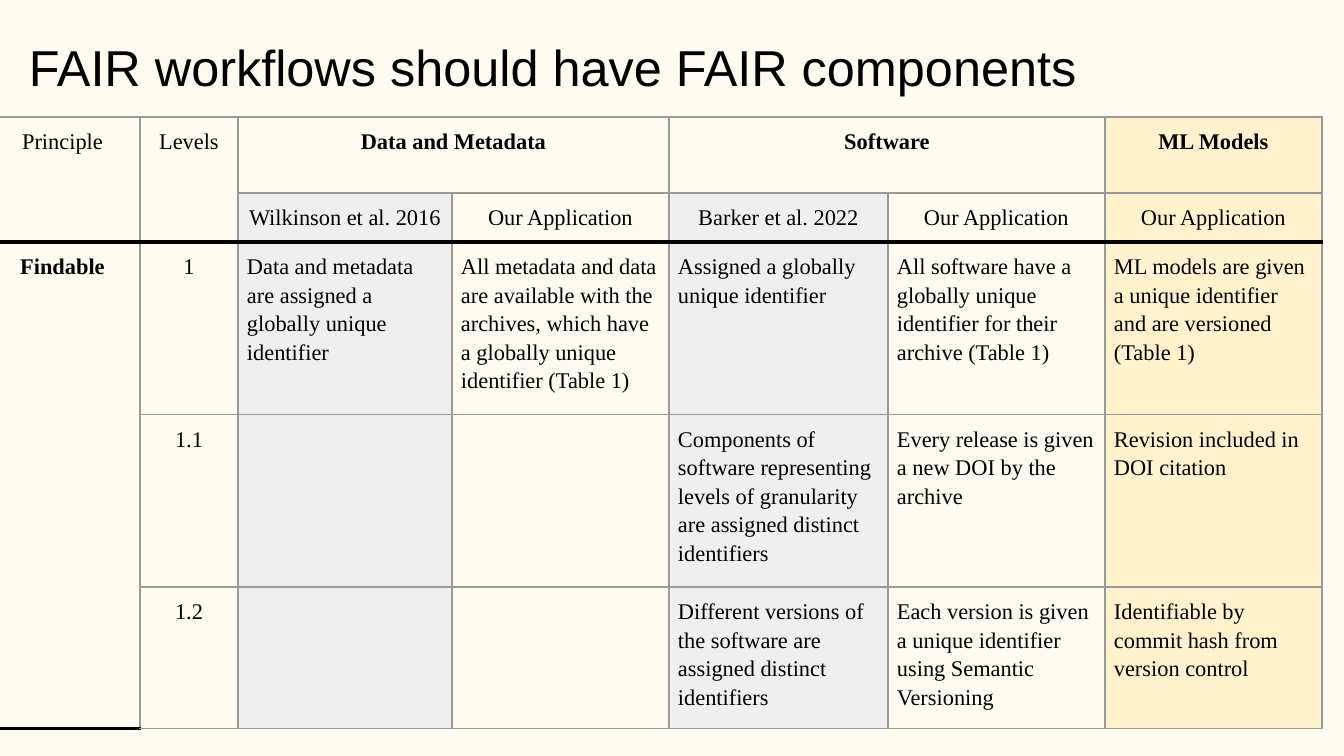
from lxml.etree import SubElement
from pptx import Presentation
from pptx.dml.color import RGBColor
from pptx.enum.text import MSO_ANCHOR, PP_ALIGN
from pptx.oxml.ns import qn
from pptx.util import Pt

PX = 914400 / 134.4
CREAM = RGBColor(0xFF, 0xFB, 0xF0)
BLACK = RGBColor(0, 0, 0)
GRID = RGBColor(0x99, 0x99, 0x99)
GREY = RGBColor(0xEF, 0xEF, 0xEF)
YELLOW = RGBColor(0xFF, 0xF2, 0xCC)

COLUMNS = [155, 98, 214, 217, 219, 217, 217]
ROWS = [76, 47, 162, 161, 133]
HEADER_ROWS = 2
FILLS = {2: GREY, 4: GREY, 6: YELLOW}
BOLD = {"Data and Metadata", "Software", "ML Models", "Findable"}
TEXTS = [
    ["Principle", "Levels", "Data and Metadata", "", "Software", "", "ML Models"],
    ["", "", "Wilkinson et al. 2016", "Our Application",
     "Barker et al. 2022", "Our Application", "Our Application"],
    ["Findable", "1",
     "Data and metadata are assigned a globally unique identifier",
     "All metadata and data are available with the archives, which have "
     "a globally unique identifier (Table 1)",
     "Assigned a globally unique identifier",
     "All software have a globally unique identifier for their archive (Table 1)",
     "ML models are given a unique identifier and are versioned (Table 1)"],
    ["", "1.1", "", "",
     "Components of software representing levels of granularity "
     "are assigned distinct identifiers",
     "Every release is given a new DOI by the archive",
     "Revision included in DOI citation"],
    ["", "1.2", "", "",
     "Different versions of the software are assigned distinct identifiers",
     "Each version is given a unique identifier using Semantic Versioning",
     "Identifiable by commit hash from version control"],
]
# First and last cell of each merged block, as (row, column)
MERGES = [((0, 0), (1, 0)), ((0, 1), (1, 1)), ((0, 2), (0, 3)),
          ((0, 4), (0, 5)), ((2, 0), (4, 0))]


def px(length):
    return round(length * PX)


def write(frame, text, font="Times New Roman", size=12, bold=False,
          align=PP_ALIGN.LEFT, spacing=1.15):
    para = frame.paragraphs[0]
    para.alignment = align
    para.line_spacing = spacing
    span = para.add_run()
    span.text = text
    span.font.name = font
    span.font.size = Pt(size)
    span.font.bold = bold
    span.font.color.rgb = BLACK


deck = Presentation()
deck.slide_width, deck.slide_height = px(1344), px(756)
slide = deck.slides.add_slide(deck.slide_layouts[6])
slide.background.fill.solid()
slide.background.fill.fore_color.rgb = CREAM

title = slide.shapes.add_textbox(px(16), px(20), px(1253), px(90)).text_frame
title.word_wrap = True
title.vertical_anchor = MSO_ANCHOR.BOTTOM
title.margin_left = title.margin_right = px(13)
title.margin_top = title.margin_bottom = px(13)
write(title, "FAIR workflows should have FAIR components",
      font="Arial", size=27, spacing=1.0)

table = slide.shapes.add_table(len(ROWS), len(COLUMNS), px(-15), px(117),
                               px(sum(COLUMNS)), px(sum(ROWS))).table
table.first_row = table.horz_banding = False
for column, width in zip(table.columns, COLUMNS):
    column.width = px(width)
for row, height in zip(table.rows, ROWS):
    row.height = px(height)
for first, last in MERGES:
    table.cell(*first).merge(table.cell(*last))

for r, texts in enumerate(TEXTS):
    for c, text in enumerate(texts):
        cell = table.cell(r, c)
        cell.margin_left = cell.margin_right = px(9)
        cell.margin_top = cell.margin_bottom = px(9)
        centred = r < HEADER_ROWS or c < 2
        write(cell.text_frame, text, bold=text in BOLD,
              align=PP_ALIGN.CENTER if centred else PP_ALIGN.LEFT)

        if not cell.is_spanned:
            bottom = r + (cell.span_height if cell.is_merge_origin else 1)
            borders = dict.fromkeys(["lnL", "lnR", "lnT", "lnB"], (GRID, 1))
            if r == HEADER_ROWS:
                borders["lnT"] = (BLACK, 2.25)
            if bottom == HEADER_ROWS:
                borders["lnB"] = (BLACK, 2.25)
            if bottom == len(ROWS) and c == 0:
                borders["lnB"] = (BLACK, 1.5)
            properties = cell._tc.get_or_add_tcPr()
            for side, (color, weight) in borders.items():
                line = SubElement(properties, qn(f"a:{side}"), w=str(Pt(weight)))
                fill = SubElement(line, qn("a:solidFill"))
                SubElement(fill, qn("a:srgbClr"), val=str(color))

        plain = r == 0 and c < 6
        if c in FILLS and not plain:
            cell.fill.solid()
            cell.fill.fore_color.rgb = FILLS[c]
        else:
            cell.fill.background()

deck.save("out.pptx")
